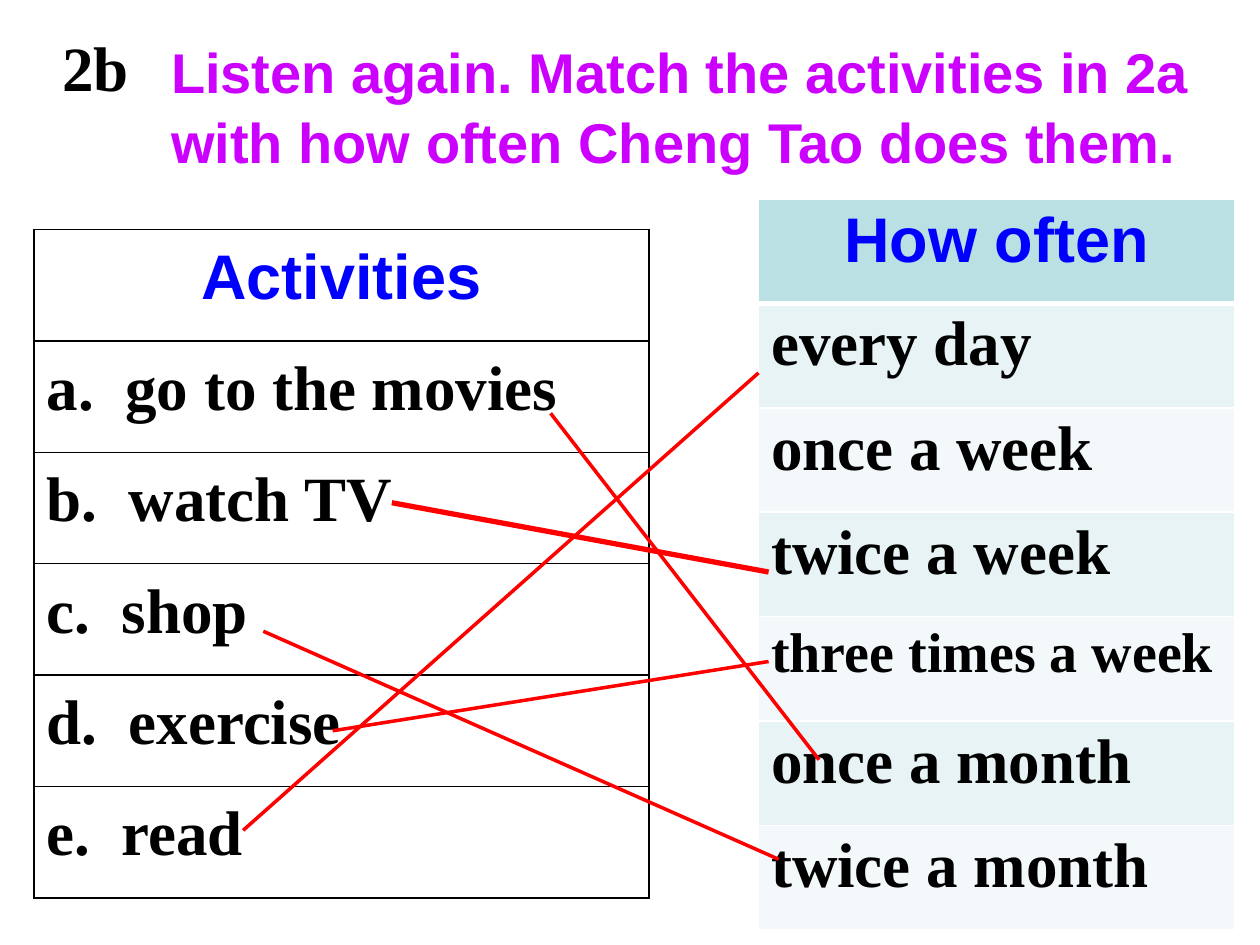
from lxml.etree import SubElement
from pptx import Presentation
from pptx.dml.color import RGBColor
from pptx.enum.shapes import MSO_CONNECTOR, MSO_SHAPE
from pptx.enum.text import MSO_ANCHOR, PP_ALIGN
from pptx.oxml.ns import qn
from pptx.util import Inches, Pt

COLORS = {
    "ink": "000000", "paper": "FFFFFF", "blue": "0000FF",
    "pink": "CC00FF", "red": "FF0000",
    "head": "BBE0E3", "odd": "E7F3F4", "even": "F3F9FA",
}
SANS, SERIF = "Arial", "Times New Roman"


class Page:
    def __init__(self, slide):
        self.slide = slide

    def color(self, name):
        return RGBColor.from_string(COLORS[name])

    def label(self, frame, text, face, color, size=36, align=PP_ALIGN.LEFT, space=1.0):
        par = frame.paragraphs[0]
        par.text = text
        par.alignment = align
        par.line_spacing = space
        par.font.name = face
        par.font.size = Pt(size)
        par.font.bold = True
        par.font.color.rgb = self.color(color)

    def title(self, box, text):
        frame = self.slide.shapes.add_textbox(*map(Inches, box)).text_frame
        frame.word_wrap = True
        self.label(frame, text, SANS, "pink", 32, space=1.05)

    def badge(self, box, text):
        shape = self.slide.shapes.add_shape(MSO_SHAPE.OVAL, *map(Inches, box))
        shape.shadow.inherit = False
        shape.fill.background()
        shape.line.fill.background()
        frame = shape.text_frame
        frame.word_wrap = False
        frame.vertical_anchor = MSO_ANCHOR.MIDDLE
        self.label(frame, text, SERIF, "ink", align=PP_ALIGN.CENTER)

    def border(self, cell, color, top, base):
        props = cell._tc.get_or_add_tcPr()
        for side, width in zip("LRTB", (1, 1, top, base)):
            line = SubElement(props, qn(f"a:ln{side}"), w=str(Pt(width)))
            fill = SubElement(line, qn("a:solidFill"))
            SubElement(fill, qn("a:srgbClr"), val=COLORS[color])

    def table(self, box, rows, fills, edge, rule=1, space=1.0, sizes={}):
        frame = self.slide.shapes.add_table(len(rows), 1, *map(Inches, box))
        table = frame.table
        table.horz_banding = False
        for i, text in enumerate(rows):
            table.rows[i].height = Inches(box[3] / len(rows))
            cell = table.cell(i, 0)
            self.border(cell, edge, rule if i == 1 else 1, rule if i == 0 else 1)
            cell.fill.solid()
            cell.fill.fore_color.rgb = self.color(fills[0] if i == 0 else fills[2 - i % 2])
            face, color, align = (
                (SERIF, "ink", PP_ALIGN.LEFT) if i else (SANS, "blue", PP_ALIGN.CENTER)
            )
            self.label(cell.text_frame, text, face, color, sizes.get(i, 36), align, space)

    def match(self, start, end, width=2):
        line = self.slide.shapes.add_connector(
            MSO_CONNECTOR.STRAIGHT, *map(Inches, start + end))
        line.line.color.rgb = self.color("red")
        line.line.width = Pt(width)
        SubElement(line._element.spPr, qn("a:effectLst"))


def main():
    deck = Presentation()
    deck.slide_width, deck.slide_height = Inches(10), Inches(7.5)
    page = Page(deck.slides.add_slide(deck.slide_layouts[6]))

    page.title((1.26, 0.22, 8.31, 1.17),
               "Listen again. Match the activities in 2a with how often Cheng Tao does them.")
    page.badge((0.27, 0.05, 0.98, 0.95), "2b")
    page.table((6.02, 1.58, 3.78, 5.8),
               ["How often", "every day", "once a week", "twice a week",
                "three times a week", "once a month", "twice a month"],
               ("head", "odd", "even"), "paper", rule=3, sizes={4: 32})
    page.table((0.27, 1.82, 4.88, 5.31),
               ["Activities", "a.  go to the movies", "b.  watch TV",
                "c.  shop", "d.  exercise", "e.  read"],
               ("paper",) * 3, "ink", space=1.1)

    page.match((3.11, 3.99), (6.1, 4.54), 3)
    for start, end in (
        ((2.09, 5.01), (6.18, 6.82)),
        ((2.64, 5.8), (6.1, 5.25)),
        ((4.37, 3.28), (6.5, 6.03)),
        ((1.93, 6.59), (6.02, 2.96)),
    ):
        page.match(start, end)
    deck.save("out.pptx")


if __name__ == "__main__":
    main()
